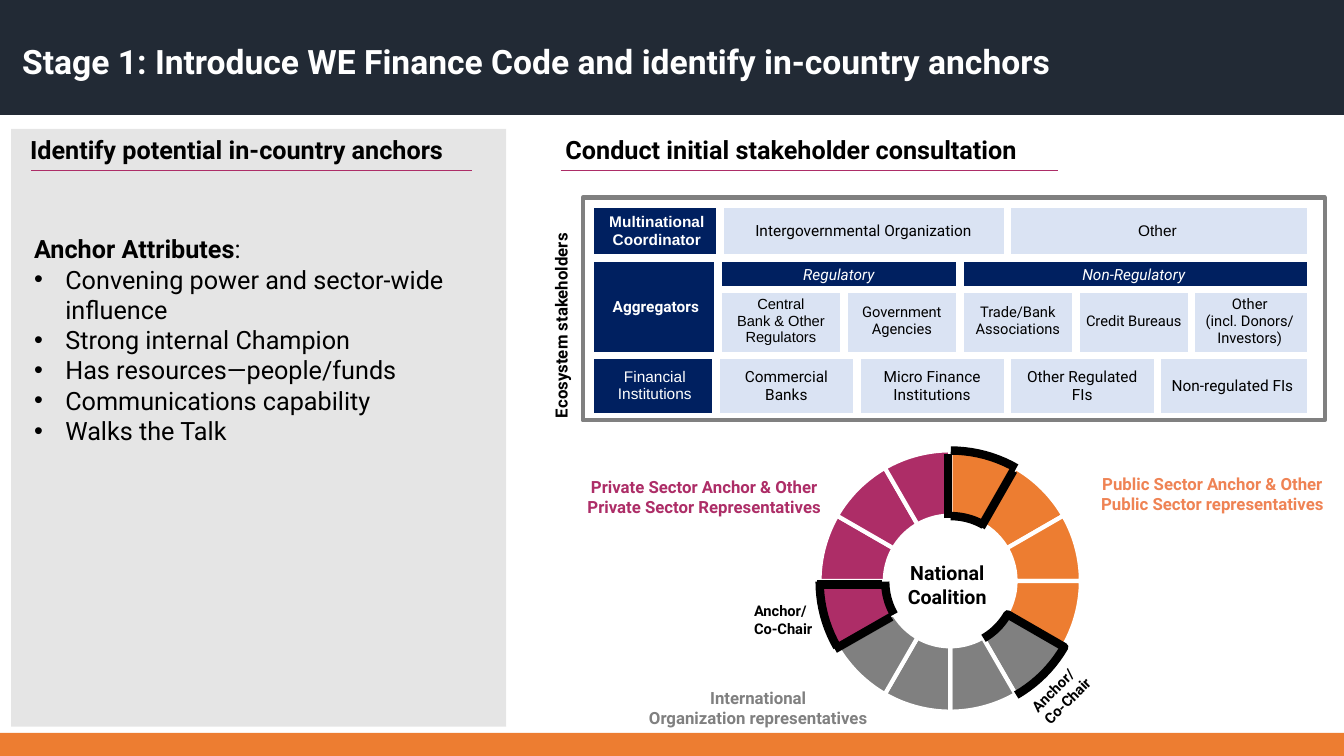
import math
from dataclasses import dataclass
from lxml import etree
from pptx import Presentation, util as u
from pptx.chart.data import CategoryChartData
from pptx.dml.color import RGBColor
from pptx.enum import chart as charts, shapes, text
from pptx.oxml import parse_xml
from pptx.oxml.ns import nsdecls, qn

PX = 9144


@dataclass(frozen=True)
class Theme:
    orange: str = "ED7D31"
    coral: str = "EF8354"
    slate: str = "222A35"
    gray: str = "808080"
    pink: str = "AD2D67"
    navy: str = "002060"
    pale: str = "DAE3F3"
    white: str = "FFFFFF"
    black: str = "000000"
    font: str = "Roboto"
    alt_font: str = "Arial"
    title: int = 24
    body: int = 18
    hub: int = 14
    label: int = 12
    cell: int = 11
    small: float = 10.5


theme = Theme()
CENTER = text.PP_ALIGN.CENTER
MIDDLE = text.MSO_ANCHOR.MIDDLE


@dataclass(frozen=True)
class Box:
    left: int
    top: int
    width: int
    height: int

    def inner(self, left, top, width, height):
        return Box(self.left + left, self.top + top, width, height)

    def emu(self):
        return [n * PX for n in (self.left, self.top, self.width, self.height)]


def rgb(color):
    return RGBColor.from_string(color)


def write(para, content, size=theme.body, color=theme.black, font=theme.font,
          bold=False, italic=False, align=None):
    if align is not None:
        para.alignment = align
    span = para.add_run()
    span.text = content
    span.font.size, span.font.name = u.Pt(size), font
    span.font.bold, span.font.italic = bold, italic
    span.font.color.rgb = rgb(color)


def write_lines(frame, content, **style):
    frame.word_wrap = True
    for index, line in enumerate(content.split("\n")):
        para = frame.add_paragraph() if index else frame.paragraphs[0]
        write(para, line, **style)


def label(page, box, content, rotation=0, **style):
    shape = page.shapes.add_textbox(*box.emu())
    shape.rotation = rotation
    write_lines(shape.text_frame, content, **style)
    return shape


def block(page, box, fill, line=None, width=0):
    shape = page.shapes.add_shape(shapes.MSO_SHAPE.RECTANGLE, *box.emu())
    shape.shadow.inherit = False
    shape.fill.solid()
    shape.fill.fore_color.rgb = rgb(fill)
    if line:
        shape.line.color.rgb, shape.line.width = rgb(line), u.Pt(width)
    else:
        shape.line.fill.background()
    return shape


def rule(page, box, ends, color, width):
    x1, y1, x2, y2 = ends
    points = (box.left + x1, box.top + y1, box.left + x2, box.top + y2)
    line = page.shapes.add_connector(shapes.MSO_CONNECTOR.STRAIGHT, *[n * PX for n in points])
    line.line.color.rgb, line.line.width = rgb(color), u.Pt(width)
    etree.SubElement(line._element.spPr, qn("a:effectLst"))


def header(page, box):
    block(page, box, theme.slate)
    title = page.shapes.title
    title._element.getparent().append(title._element)
    title.left, title.top, title.width, title.height = box.inner(0, 0, 1314, box.height).emu()
    frame = title.text_frame
    frame.margin_left, frame.vertical_anchor = 22 * PX, MIDDLE
    frame.paragraphs[0].line_spacing = 1.2
    write_lines(frame, "Stage 1: Introduce WE Finance Code and identify in-country anchors",
                size=theme.title, color=theme.white, bold=True, align=text.PP_ALIGN.LEFT)


def heading(page, box, content, start, end):
    label(page, box, content, bold=True)
    rule(page, box, (start, 41, end, 41), theme.pink, 0.5)


def anchor_panel(page, box):
    panel = block(page, box, theme.gray)
    color = panel._element.spPr.find(qn("a:solidFill"))[0]
    etree.SubElement(color, qn("a:alpha"), val="20000")
    heading(page, box.inner(9, 0, 480, 40), "Identify potential in-country anchors", 11, 448)
    frame = label(page, box.inner(13, 99, 480, 222), "Anchor Attributes", bold=True).text_frame
    write(frame.paragraphs[0], ":")
    for item in ("Convening power and sector-wide influence", "Strong internal Champion",
                 "Has resources—people/funds", "Communications capability", "Walks the Talk"):
        para = frame.add_paragraph()
        props = para._p.get_or_add_pPr()
        props.set("marL", str(31 * PX))
        props.set("indent", str(-31 * PX))
        etree.SubElement(props, qn("a:buFont"), typeface=theme.alt_font)
        etree.SubElement(props, qn("a:buChar"), char="•")
        write(para, item)


def stakeholder_table(page, box, widths, heights, cells):
    frame = page.shapes.add_table(len(heights), len(widths), *box.emu())
    table = frame.table
    table.first_row = table.horz_banding = False
    for column, width in zip(table.columns, widths):
        column.width = width * PX
    for row, height in zip(table.rows, heights):
        row.height = height * PX
    for row, col, rows, cols, content, fill, style in cells:
        cell = table.cell(row, col)
        if rows * cols > 1:
            cell.merge(table.cell(row + rows - 1, col + cols - 1))
        borders = {"L": col > 0, "R": col + cols < len(widths),
                   "T": row > 0, "B": row + rows < len(heights)}
        props = cell._tc.get_or_add_tcPr()
        for side in (side for side, shown in borders.items() if shown):
            props.append(parse_xml(
                f'<a:ln{side} {nsdecls("a")} w="76200"><a:solidFill>'
                f'<a:srgbClr val="{theme.white}"/></a:solidFill></a:ln{side}>'))
        cell.fill.solid()
        cell.fill.fore_color.rgb = rgb(fill)
        cell.vertical_anchor = MIDDLE
        color = theme.white if fill == theme.navy else theme.black
        write_lines(cell.text_frame, content, **{"size": theme.cell, "color": color,
                                                 "align": CENTER, **style})


def stakeholders(page, box):
    block(page, box, theme.white, theme.gray, 3)
    label(page, box.inner(-158, 77, 273, 30), "Ecosystem stakeholders", 270,
          size=theme.label, bold=True)
    navy, pale = theme.navy, theme.pale
    arial, small = {"font": theme.alt_font}, {"size": theme.small}
    institutions = ("Commercial\nBanks", "Micro Finance Institutions",
                    "Other Regulated FIs", "Non-regulated FIs")
    stakeholder_table(page, box.inner(11, 160, 708, 54), (121, 140, 149, 149, 149), (54,), [
        (0, 0, 1, 1, "Financial Institutions", navy, arial),
        *[(0, i, 1, 1, name, pale, {}) for i, name in enumerate(institutions, 1)]])
    stakeholder_table(page, box.inner(11, 10, 708, 44), (125, 285, 298), (44,), [
        (0, 0, 1, 1, "Multinational Coordinator", navy, {**arial, "bold": True}),
        (0, 1, 1, 1, "Intergovernmental Organization", pale, {}),
        (0, 2, 1, 1, "Other", pale, arial)])
    bodies = ("Government Agencies", "Trade/Bank Associations", "Credit Bureaus",
              "Other\n(incl. Donors/\nInvestors)")
    stakeholder_table(page, box.inner(11, 63, 708, 88), (123, 125, 115, 115, 115, 115), (28, 60), [
        (0, 0, 2, 1, "Aggregators", navy, {"bold": True}),
        (0, 1, 1, 2, "Regulatory", navy, {"italic": True}),
        (0, 3, 1, 3, "Non-Regulatory", navy, {"italic": True}),
        (1, 1, 1, 1, "Central\nBank & Other Regulators", pale, {**arial, **small}),
        *[(1, i, 1, 1, name, pale, small) for i, name in enumerate(bodies, 2)]])


def ring(page, box):
    data = CategoryChartData()
    data.categories = [str(n) for n in range(1, 13)]
    data.add_series("Series 1", [8] * 12)
    chart = page.shapes.add_chart(charts.XL_CHART_TYPE.DOUGHNUT, *box.emu(), data).chart
    chart.has_legend = chart.has_title = False
    chart.font.name, chart.font.size = theme.font, u.Pt(10)
    chart.font.color.rgb = rgb(theme.black)
    plot = chart.plots[0]
    plot.vary_by_categories = True
    plot.has_data_labels = False
    for index in range(12):
        form = plot.series[0].points[index].format
        form.fill.solid()
        form.fill.fore_color.rgb = rgb((theme.orange, theme.gray, theme.pink)[index // 4])
        form.line.color.rgb, form.line.width = rgb(theme.white), u.Pt(3)
    area = chart._chartSpace.chart.plotArea
    for old in area.findall(qn("c:layout")):
        area.remove(old)
    places = (("layoutTarget", "inner"), ("xMode", "edge"), ("yMode", "edge"),
              ("x", 0.025), ("y", 0.025), ("w", 0.95), ("h", 0.95))
    layout = "".join(f'<c:{name} val="{value}"/>' for name, value in places)
    area.insert(0, parse_xml(f'<c:layout {nsdecls("c")}><c:manualLayout>{layout}'
                             '</c:manualLayout></c:layout>'))


def outline(page, box, arcs):
    points = []
    for radius, start, end in arcs:
        for step in range(11):
            angle = math.radians(start + (end - start) * step / 10)
            points.append(((box.left + 392 + radius * math.sin(angle)) * PX,
                           (box.top + 137 - radius * math.cos(angle)) * PX))
    builder = page.shapes.build_freeform(*points[0])
    builder.add_line_segments(points[1:], close=False)
    shape = builder.convert_to_shape()
    shape.shadow.inherit = False
    shape.fill.background()
    shape.line.color.rgb, shape.line.width = rgb(theme.black), u.Pt(6)


def coalition(page, box):
    sectors = (
        ((519, 25, 265, 50), "Public Sector Anchor & Other Public Sector representatives", theme.coral),
        ((0, 28, 295, 50), "Private Sector Anchor & Other Private Sector Representatives", theme.pink),
        ((20, 237, 362, 50), "International\nOrganization representatives", theme.gray))
    for place, content, color in sectors:
        label(page, box.inner(*place), content, size=theme.label, color=color, bold=True, align=CENTER)
    ring(page, box.inner(255, 0, 273, 273))
    for ends in ((389, 74, 389, 10), (422, 83, 454, 27), (333, 172, 277, 204), (324, 140, 259, 140)):
        rule(page, box, ends, theme.black, 6)
    far, near = 130, 65
    for arcs in ([(far, 0, 30)], [(near, 0, 30)], [(far, 240, 270)], [(near, 240, 270)],
                 [(near, 150, 120), (far, 120, 150)]):
        outline(page, box, arcs)
    hub = label(page, box.inner(346, 110, 85, 60), "National Coalition",
                size=theme.hub, bold=True, align=CENTER).text_frame
    hub.margin_left = hub.margin_right = hub.margin_top = hub.margin_bottom = 0
    hub.vertical_anchor = MIDDLE
    for left, top, rotation in ((187, 152, 0), (459, 218, 315)):
        label(page, box.inner(left, top, 102, 45), "Anchor/\nCo-Chair", rotation,
              size=theme.small, bold=True)


def main():
    deck = Presentation()
    deck.slide_width, deck.slide_height = 1333 * PX, 750 * PX
    page = deck.slides.add_slide(deck.slide_layouts[5])
    block(page, Box(0, 727, 1333, 23), theme.orange)
    header(page, Box(0, 0, 1333, 114))
    anchor_panel(page, Box(11, 128, 491, 593))
    heading(page, Box(551, 128, 667, 40), "Conduct initial stakeholder consultation", 5, 498)
    stakeholders(page, Box(578, 196, 736, 221))
    coalition(page, Box(551, 440, 784, 285))
    deck.save("out.pptx")


if __name__ == "__main__":
    main()
